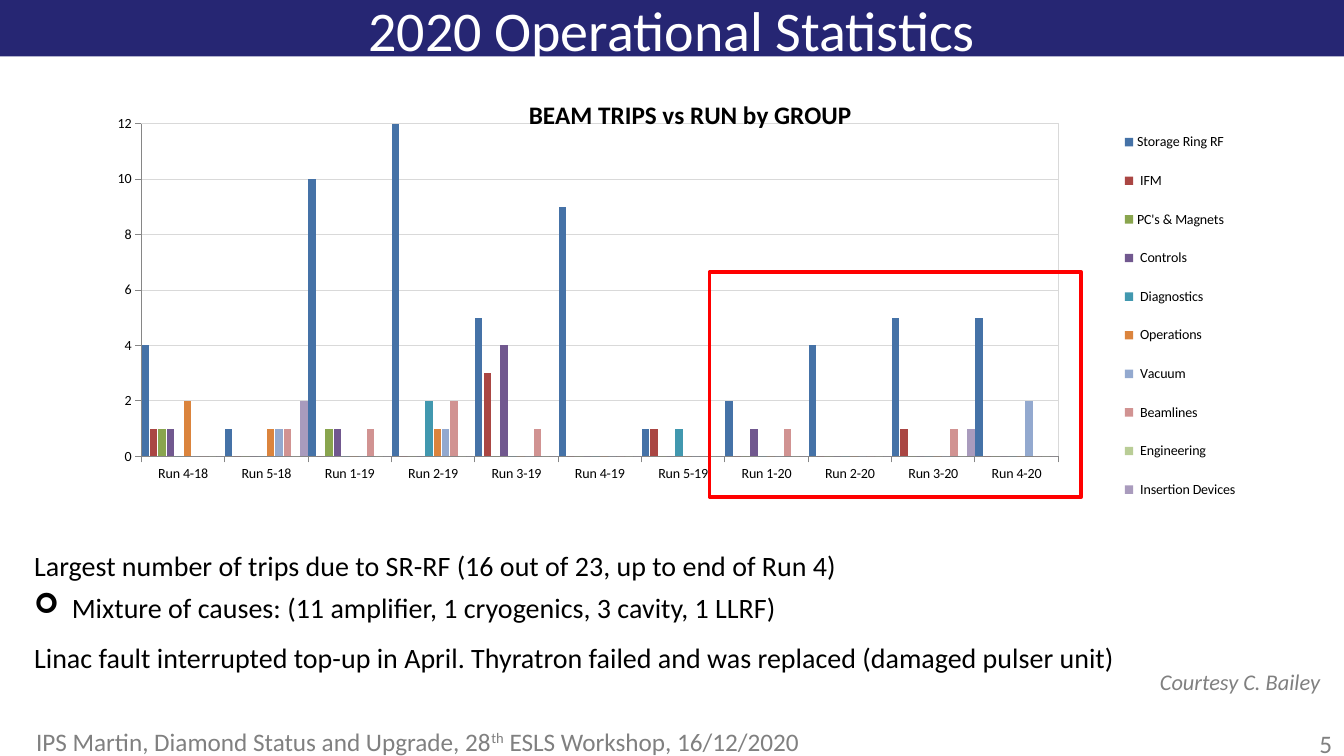
from dataclasses import dataclass

from lxml import etree
from pptx import Presentation
from pptx.chart.data import CategoryChartData
from pptx.dml.color import RGBColor
from pptx.enum.chart import XL_CHART_TYPE, XL_LEGEND_POSITION, XL_TICK_MARK
from pptx.enum.shapes import MSO_SHAPE
from pptx.enum.text import MSO_ANCHOR, PP_ALIGN
from pptx.oxml import parse_xml
from pptx.oxml.ns import nsdecls, qn
from pptx.util import Cm, Pt

RECTANGLE = MSO_SHAPE.RECTANGLE
COLUMNS = XL_CHART_TYPE.COLUMN_CLUSTERED
LEGEND_RIGHT = XL_LEGEND_POSITION.RIGHT
TICK_OUTSIDE = XL_TICK_MARK.OUTSIDE
MIDDLE = MSO_ANCHOR.MIDDLE
LEFT, CENTER = PP_ALIGN.LEFT, PP_ALIGN.CENTER


@dataclass(frozen=True)
class Theme:
    font: str = "Calibri"
    navy: str = "262673"
    white: str = "FFFFFF"
    black: str = "000000"
    muted: str = "808080"
    axis: str = "868686"
    grid: str = "D9D9D9"
    alert: str = "FF0000"
    title: int = 40
    body: int = 20
    small: int = 18
    credit: int = 16
    chart: int = 10


THEME = Theme()

RUNS = ["Run 4-18", "Run 5-18", "Run 1-19", "Run 2-19", "Run 3-19", "Run 4-19",
        "Run 5-19", "Run 1-20", "Run 2-20", "Run 3-20", "Run 4-20"]
TRIPS = [
    ("Storage Ring RF", "4572A7", (4, 1, 10, 12, 5, 9, 1, 2, 4, 5, 5)),
    (" IFM", "AA4643", (1, 0, 0, 0, 3, 0, 1, 0, 0, 1, 0)),
    ("PC's & Magnets", "89A54E", (1, 0, 1, 0, 0, 0, 0, 0, 0, 0, 0)),
    (" Controls", "71588F", (1, 0, 1, 0, 4, 0, 0, 1, 0, 0, 0)),
    (" Diagnostics", "4198AF", (0, 0, 0, 2, 0, 0, 1, 0, 0, 0, 0)),
    (" Operations", "DB843D", (2, 1, 0, 1, 0, 0, 0, 0, 0, 0, 0)),
    (" Vacuum", "93A9CF", (0, 1, 0, 1, 0, 0, 0, 0, 0, 0, 2)),
    (" Beamlines", "D19392", (0, 1, 1, 2, 1, 0, 0, 1, 0, 1, 0)),
    (" Engineering", "B9CD96", (0, 0, 0, 0, 0, 0, 0, 0, 0, 0, 0)),
    (" Insertion Devices", "A99BBD", (0, 2, 0, 0, 0, 0, 0, 0, 0, 1, 0)),
]
# Text, space after in points, bulleted
FINDINGS = [
    ("Largest number of trips due to SR-RF (16 out of 23, up to end of Run 4)", 6, False),
    ("Mixture of causes: (11 amplifier, 1 cryogenics, 3 cavity, 1 LLRF)", 12, True),
    ("Linac fault interrupted top-up in April. Thyratron failed and was replaced "
     "(damaged pulser unit)", 0, False),
]


def color(code):
    return RGBColor.from_string(code)


def style_font(font, size, code, bold=False, italic=False):
    font.name, font.size = THEME.font, Pt(size)
    font.bold, font.italic = bold, italic
    font.color.rgb = color(code)


def add_rectangle(page, place, fill=None, line=None, width=0):
    box = page.shapes.add_shape(RECTANGLE, *map(Cm, place))
    box.shadow.inherit = False
    if fill:
        box.fill.solid()
        box.fill.fore_color.rgb = color(fill)
    else:
        box.fill.background()
    if line:
        box.line.color.rgb = color(line)
        box.line.width = Pt(width)
    else:
        box.line.fill.background()
    return box


def add_label(page, place, pieces, size, code, align=LEFT, italic=False, wrap=True):
    """Add one line of text; pieces are (text, raised) pairs."""
    box = page.shapes.add_textbox(*map(Cm, place))
    frame = box.text_frame
    frame.word_wrap = wrap
    frame.vertical_anchor = MIDDLE
    para = frame.paragraphs[0]
    para.alignment = align
    for text, raised in pieces:
        span = para.add_run()
        span.text = text
        style_font(span.font, size, code, italic=italic)
        if raised:
            span.font._element.set("baseline", "30000")


def add_arrow_bullet(para):
    properties = para._p.get_or_add_pPr()
    properties.set("marL", str(Cm(0.95)))
    properties.set("indent", str(-Cm(0.95)))
    etree.SubElement(properties, qn("a:buFont")).set("typeface", "Wingdings")
    etree.SubElement(properties, qn("a:buChar")).set("char", "➢")


def add_findings(page, place):
    frame = add_rectangle(page, place, fill=THEME.white).text_frame
    frame.word_wrap = True
    frame.vertical_anchor = MSO_ANCHOR.TOP
    for index, (text, space, bulleted) in enumerate(FINDINGS):
        para = frame.paragraphs[0] if index == 0 else frame.add_paragraph()
        para.text = text
        para.alignment = LEFT
        para.space_after = Pt(space)
        if bulleted:
            add_arrow_bullet(para)
        style_font(para.runs[0].font, THEME.body, THEME.black)


def set_layout(parent, after, inner=False, **fractions):
    """Place a chart part by fractions of the chart, after the named child."""
    for old in parent.findall(qn("c:layout")):
        parent.remove(old)
    layout = parse_xml(f"<c:layout {nsdecls('c')}><c:manualLayout/></c:layout>")
    settings = [("layoutTarget", "inner")] if inner else []
    settings += [("xMode", "edge"), ("yMode", "edge"), *fractions.items()]
    for name, value in settings:
        etree.SubElement(layout[0], qn("c:" + name)).set("val", str(value))
    if after:
        parent.find(qn(after)).addnext(layout)
    else:
        parent.insert(0, layout)


def style_axis(axis):
    axis.major_tick_mark = TICK_OUTSIDE
    axis.minor_tick_mark = XL_TICK_MARK.NONE
    axis.format.line.color.rgb = color(THEME.axis)
    axis.format.line.width = Pt(0.75)
    style_font(axis.tick_labels.font, THEME.chart, THEME.black)


def add_trips_chart(page, place):
    data = CategoryChartData()
    data.categories = RUNS
    for name, _, values in TRIPS:
        data.add_series(name, values)
    chart = page.shapes.add_chart(COLUMNS, *map(Cm, place), data).chart
    style_font(chart.font, THEME.chart, THEME.black)

    chart.has_title = True
    heading = chart.chart_title.text_frame
    heading.text = "BEAM TRIPS vs RUN by GROUP"
    style_font(heading.paragraphs[0].runs[0].font, THEME.small, THEME.black, bold=True)
    chart.chart_title.include_in_layout = True
    chart.has_legend = True
    chart.legend.position = LEGEND_RIGHT
    chart.legend.include_in_layout = False
    style_font(chart.legend.font, THEME.chart, THEME.black)

    plot = chart.plots[0]
    plot.gap_width, plot.overlap, plot.vary_by_categories = 9, -14, False
    for series, (_, code, _) in zip(plot.series, TRIPS):
        series.format.fill.solid()
        series.format.fill.fore_color.rgb = color(code)

    style_axis(chart.category_axis)
    scale = chart.value_axis
    style_axis(scale)
    scale.minimum_scale, scale.maximum_scale, scale.major_unit = 0, 12, 2
    scale.major_gridlines.format.line.color.rgb = color(THEME.grid)
    scale.major_gridlines.format.line.width = Pt(0.75)

    title, area, legend = (chart._chartSpace.find(".//" + qn(name))
                           for name in ("c:title", "c:plotArea", "c:legend"))
    set_layout(title, "c:tx", x=0.36, y=0.04)
    set_layout(area, None, inner=True, x=0.033, y=0.106, w=0.783, h=0.699)
    set_layout(legend, "c:legendPos", x=0.86, y=0.08, w=0.12, h=0.86)
    area.append(parse_xml(
        f'<c:spPr {nsdecls("c", "a")}><a:noFill/><a:ln w="9525"><a:solidFill>'
        f'<a:srgbClr val="{THEME.grid}"/></a:solidFill></a:ln></c:spPr>'))


def main():
    deck = Presentation()
    deck.slide_width, deck.slide_height = Cm(33.87), Cm(19.05)
    page = deck.slides.add_slide(deck.slide_layouts[6])
    add_rectangle(page, (0, 0, 33.87, 1.42), fill=THEME.navy)
    add_label(page, (33, 18.19, 2.34, 1.07), [("5", False)], THEME.small, THEME.muted)
    add_label(page, (0.66, -0.28, 32.54, 2.01), [("2020 Operational Statistics", False)],
              THEME.title, THEME.white, align=CENTER)
    add_label(page, (0.66, 18.14, 26.14, 1.07),
              [("IPS Martin, Diamond Status and Upgrade, 28", False), ("th", True),
               (" ESLS Workshop, 16/12/2020", False)], THEME.small, THEME.muted)
    add_findings(page, (0.61, 13.69, 28.19, 3.45))
    add_trips_chart(page, (2.59, 1.85, 29.51, 11.99))
    add_rectangle(page, (17.88, 6.86, 9.37, 5.66), line=THEME.alert, width=2.75)
    add_label(page, (28.98, 16.71, 4.6, 0.94), [("Courtesy C. Bailey", False)],
              THEME.credit, THEME.muted, italic=True, wrap=False)
    deck.save("out.pptx")


if __name__ == "__main__":
    main()
